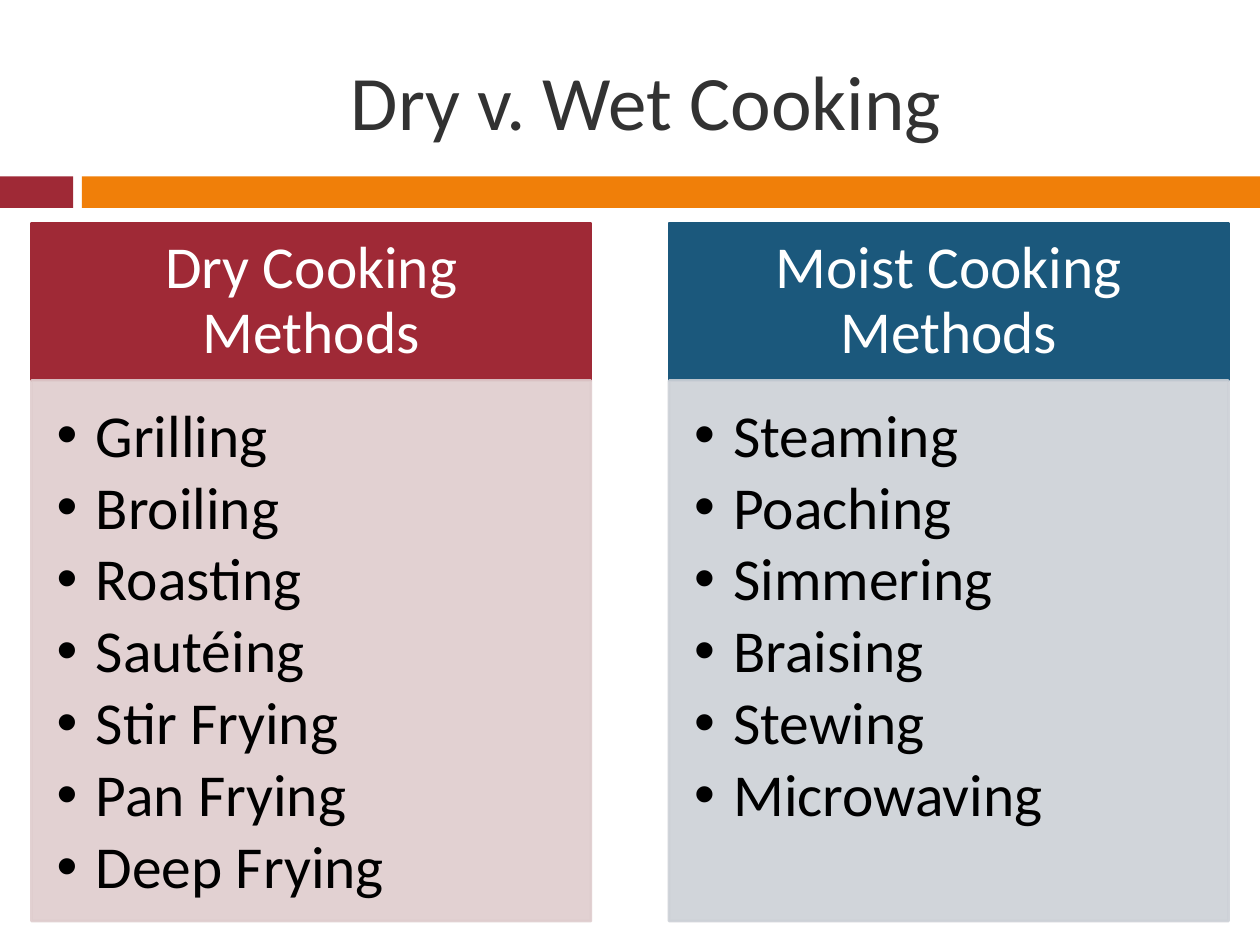
from dataclasses import dataclass

from lxml.etree import SubElement
from pptx import Presentation
from pptx.dml.color import RGBColor
from pptx.enum.shapes import MSO_SHAPE
from pptx.enum.text import MSO_ANCHOR, MSO_AUTO_SIZE, PP_ALIGN
from pptx.oxml.ns import qn
from pptx.util import Inches, Pt


@dataclass(frozen=True)
class Theme:
    font: str = "Calibri"
    title_size: int = 44
    text_size: int = 34
    title: str = "323232"
    header_text: str = "FFFFFF"
    list_text: str = "000000"
    red: str = "9F2936"
    orange: str = "F07F09"
    blue: str = "1B587C"
    pale_red: str = "DFCDCE"
    pale_blue: str = "CDD1D7"


theme = Theme()


def fill_panel(panel, color, opacity=100):
    """Give a panel matching fill and outline."""
    panel.line.width = Pt(1.5)
    for paint in (panel.fill, panel.line.fill):
        paint.solid()
        paint.fore_color.rgb = RGBColor.from_string(color)
    if opacity < 100:
        for rgb in panel._element.spPr.iter(qn("a:srgbClr")):
            SubElement(rgb, qn("a:alpha")).set("val", str(opacity * 1000))


def write_text(holder, box, lines, size, color, anchor, align, insets=(0.1, 0.05, 0.1, 0.05)):
    """Place a placeholder and fill it with uniformly styled paragraphs."""
    holder.left, holder.top, holder.width, holder.height = map(Inches, box)
    frame = holder.text_frame
    frame.text = "\n".join(lines)
    frame.word_wrap = True
    frame.auto_size = MSO_AUTO_SIZE.NONE
    frame.vertical_anchor = anchor
    frame.margin_left, frame.margin_top, frame.margin_right, frame.margin_bottom = map(Inches, insets)
    for paragraph in frame.paragraphs:
        paragraph.alignment = align
        paragraph.space_before = Pt(0)
        paragraph.font.name = theme.font
        paragraph.font.size = Pt(size)
        paragraph.font.bold = False
        paragraph.font.color.rgb = RGBColor.from_string(color)


presentation = Presentation()
presentation.slide_width, presentation.slide_height = Inches(10), Inches(7.5)
slide = presentation.slides.add_slide(presentation.slide_layouts.get_by_name("Comparison"))
title, *column_holders = slide.placeholders

# Title
write_text(title, (0.67, 0.25, 8.92, 1.08), ["Dry v. Wet Cooking"],
           theme.title_size, theme.title, MSO_ANCHOR.MIDDLE, PP_ALIGN.CENTER)

# Divider bars
for left, width, color in ((0, 0.58, theme.red), (0.65, 9.35, theme.orange)):
    bar = slide.shapes.add_shape(MSO_SHAPE.RECTANGLE, Inches(left), Inches(1.4), Inches(width), Inches(0.25))
    bar.shadow.inherit = False
    bar.fill.solid()
    bar.fill.fore_color.rgb = RGBColor.from_string(color)
    bar.line.fill.background()

# Method columns: a header over a bulleted list
columns = (
    ("Dry Cooking Methods", theme.red, theme.pale_red,
     ["Grilling", "Broiling", "Roasting", "Sautéing", "Stir Frying", "Pan Frying", "Deep Frying"]),
    ("Moist Cooking Methods", theme.blue, theme.pale_blue,
     ["Steaming", "Poaching", "Simmering", "Braising", "Stewing", "Microwaving"]),
)
column_width, column_step = 4.44, 5.06
header_top, header_height, list_height = 1.77, 1.25, 4.29

for index, (heading, color, pale_color, methods) in enumerate(columns):
    header, method_list = column_holders[2 * index:2 * index + 2]
    left = 0.25 + index * column_step

    fill_panel(header, color)
    write_text(header, (left, header_top, column_width, header_height), [heading],
               theme.text_size, theme.header_text, MSO_ANCHOR.MIDDLE, PP_ALIGN.CENTER,
               (0.26, 0.15, 0.26, 0.15))
    header.text_frame.paragraphs[0].line_spacing = 0.9

    fill_panel(method_list, pale_color, opacity=90)
    write_text(method_list, (left, header_top + header_height, column_width, list_height), methods,
               theme.text_size, theme.list_text, MSO_ANCHOR.TOP, PP_ALIGN.LEFT,
               (0.2, 0.2, 0.26, 0.3))
    for paragraph in method_list.text_frame.paragraphs:
        paragraph.line_spacing = 0.9
        paragraph.space_after = Pt(4.4)
        properties = paragraph._p.get_or_add_pPr()
        properties.set("marL", str(Inches(0.31)))
        properties.set("indent", str(Inches(-0.31)))
        SubElement(properties, qn("a:buChar")).set("char", "•")
        # Bullets come before the run defaults in the schema
        properties.append(properties.find(qn("a:defRPr")))

presentation.save("out.pptx")
